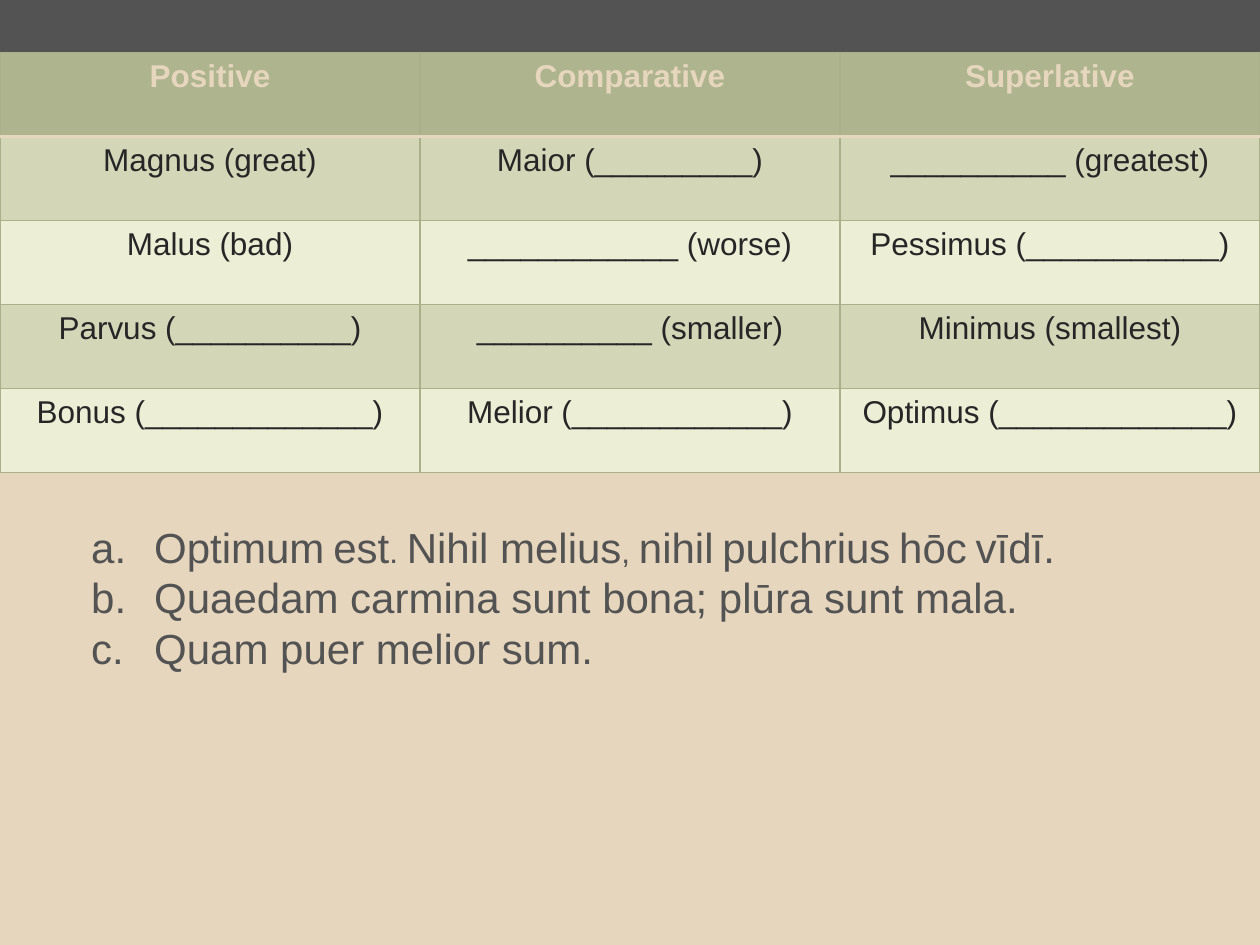
import pptx
import pptx.util
import pptx.dml.color
import pptx.enum.shapes
import pptx.enum.text
import pptx.oxml
import pptx.oxml.ns
import lxml.etree

Pt = pptx.util.Pt
COLORS = {
    "page": "E6D6BD",
    "band": "535353",
    "ink": "262626",
    "head": "ADB48E",
    "dark": "D3D6B7",
    "light": "ECEED6",
    "edge": "AAB18A",
}
ROWS = [
    ["Positive", "Comparative", "Superlative"],
    ["Magnus (great)", "Maior (_________)", "__________ (greatest)"],
    ["Malus (bad)", "____________ (worse)", "Pessimus (___________)"],
    ["Parvus (__________)", "__________ (smaller)", "Minimus (smallest)"],
    ["Bonus (_____________)", "Melior (____________)", "Optimus (_____________)"],
]
LINES = [
    [("Optimum", 24), (" ", 18), ("est", 24), (". ", 18), ("Nihil melius", 24),
     (", ", 18), ("nihil", 24), (" ", 18), ("pulchrius", 24), (" ", 18),
     ("hōc", 24), (" ", 18), ("vīdī.", 24)],
    [("Quaedam carmina sunt bona; plūra sunt mala.", 24)],
    [("Quam puer melior sum.", 24)],
]


def tint(name):
    return pptx.dml.color.RGBColor.from_string(COLORS[name])


def paint(fill, name):
    fill.solid()
    fill.fore_color.rgb = tint(name)


class Deck:
    font = "Arial"

    def __init__(self, wide, high):
        self.file = pptx.Presentation()
        self.file.slide_width = Pt(wide)
        self.file.slide_height = Pt(high)
        self.slide = self.file.slides.add_slide(self.file.slide_layouts[6])
        paint(self.slide.background.fill, "page")

    def text(self, para, words, color, **form):
        run = para.add_run()
        run.text = words
        for key, value in {"name": self.font, **form}.items():
            setattr(run.font, key, value)
        run.font.color.rgb = tint(color)

    def rect(self, box, color):
        kind = pptx.enum.shapes.MSO_SHAPE.RECTANGLE
        shape = self.slide.shapes.add_shape(kind, *map(Pt, box))
        shape.shadow.inherit = False
        paint(shape.fill, color)
        shape.line.fill.background()

    def line(self, ends, color, width):
        kind = pptx.enum.shapes.MSO_CONNECTOR.STRAIGHT
        line = self.slide.shapes.add_connector(kind, *map(Pt, ends))
        line.line.color.rgb = tint(color)
        line.line.width = Pt(width)
        props = line._element.spPr
        lxml.etree.SubElement(props, pptx.oxml.ns.qn("a:effectLst"))

    def edge(self, cell, row):
        props = cell._tc.get_or_add_tcPr()
        for side in "LRTB":
            rule = (row, side) in ((0, "B"), (1, "T"))
            color, width = ("page", 2) if rule else ("edge", 0.75)
            props.append(pptx.oxml.parse_xml(
                f'<a:ln{side} {pptx.oxml.ns.nsdecls("a")} w="{Pt(width)}">'
                f'<a:solidFill><a:srgbClr val="{COLORS[color]}"/></a:solidFill>'
                f'</a:ln{side}>'))

    def table(self, box, rows):
        size = len(rows), len(rows[0])
        table = self.slide.shapes.add_table(*size, *map(Pt, box)).table
        for r, row in enumerate(rows):
            fill = "head" if r == 0 else "dark" if r % 2 else "light"
            color = "ink" if r else "page"
            for c, words in enumerate(row):
                cell = table.cell(r, c)
                self.edge(cell, r)
                paint(cell.fill, fill)
                para = cell.text_frame.paragraphs[0]
                para.alignment = pptx.enum.text.PP_ALIGN.CENTER
                self.text(para, words, color, size=Pt(18), bold=r == 0)

    def items(self, box, lines):
        frame = self.slide.shapes.add_textbox(*map(Pt, box)).text_frame
        frame.word_wrap = True
        for i, runs in enumerate(lines):
            para = frame.add_paragraph() if i else frame.paragraphs[0]
            para.line_spacing = Pt(28.8)
            props = para._p.get_or_add_pPr()
            for key, value in {"marL": Pt(36), "indent": -Pt(36)}.items():
                props.set(key, str(value))
            mark = lxml.etree.SubElement(props, pptx.oxml.ns.qn("a:buAutoNum"))
            mark.set("type", "alphaLcPeriod")
            for words, size in runs:
                self.text(para, words, "band", size=Pt(size))


def main():
    deck = Deck(720, 540)
    deck.rect((0, 0, 720, 118), "band")
    deck.line((0, 118, 720, 118), "ink", 2.25)
    deck.table((0, 30, 720, 240), ROWS)
    deck.items((45, 294.5, 675, 94.3), LINES)
    deck.file.save("out.pptx")


if __name__ == "__main__":
    main()
